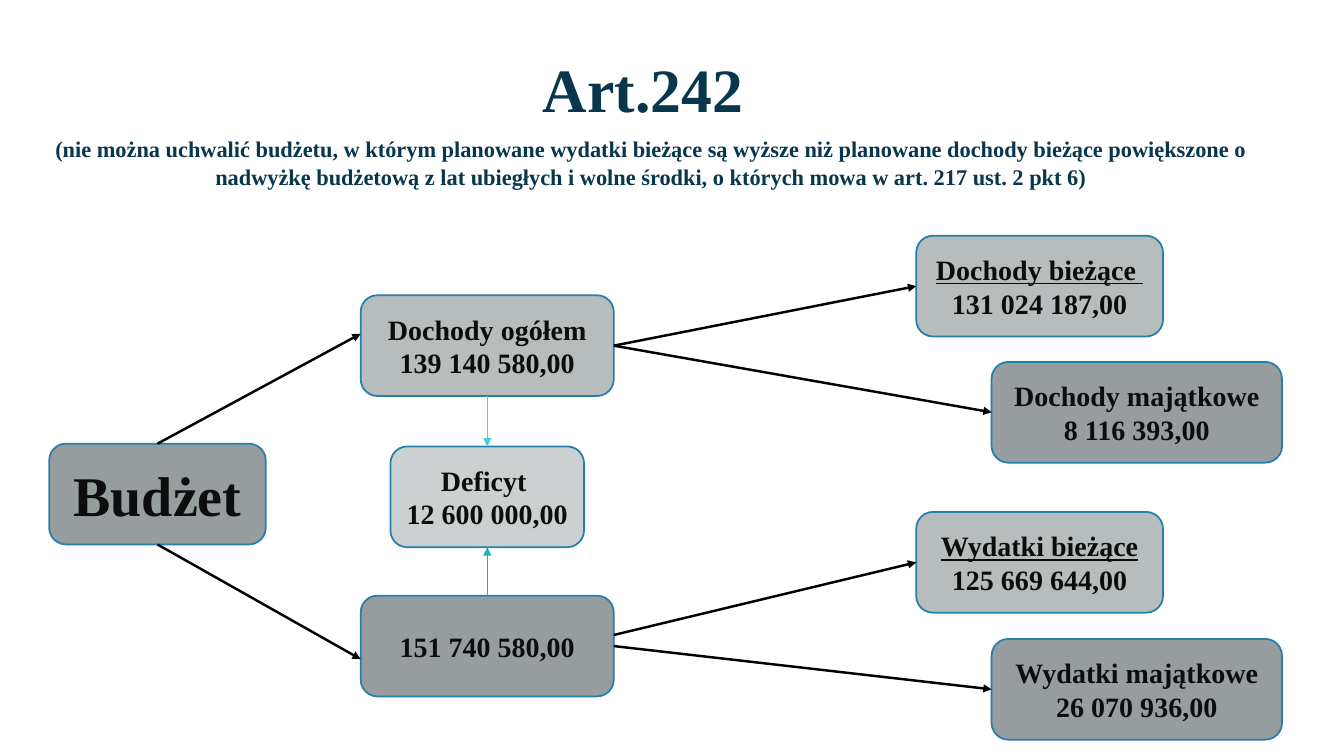
from pptx import Presentation
from pptx.dml.color import RGBColor
from pptx.enum.shapes import MSO_CONNECTOR as Link, MSO_SHAPE as Shape
from pptx.enum.text import MSO_ANCHOR as Anchor, PP_ALIGN as Align
from pptx.oxml.ns import qn
from pptx.util import Cm, Pt
from lxml.etree import SubElement

NAVY = RGBColor(0x07, 0x36, 0x4D)
INK = RGBColor(0x0D, 0x0D, 0x0D)
BLACK = RGBColor(0, 0, 0)
EDGE = RGBColor(0x24, 0x7F, 0xAF)
DARK = RGBColor(0x97, 0x9D, 0x9F)
MID = RGBColor(0xB7, 0xBC, 0xBD)
LIGHT = RGBColor(0xCD, 0xD0, 0xD1)
AQUA = RGBColor(0x4E, 0xCD, 0xDA)
TEAL = RGBColor(0x25, 0xAB, 0xB9)
TOP, LEFT, BASE, RIGHT = range(4)


class Deck:
    """Hold the slide and the style of its headings, cards and arrows."""

    font = "Times New Roman"
    high = 2.54

    def __init__(self):
        self.show = Presentation()
        self.show.slide_width, self.show.slide_height = Cm(33.87), Cm(19.05)
        self.slide = self.show.slides.add_slide(self.show.slide_layouts[0])

    def style(self, frame, size, color):
        for para in frame.paragraphs:
            para.alignment = Align.CENTER
            for run in para.runs:
                run.font.name, run.font.size = self.font, Pt(size)
                run.font.bold, run.font.color.rgb = True, color

    def head(self, index, text, top, high, size, anchor, pitch):
        box = self.slide.placeholders[index]
        box.left, box.top = Cm(1.12), Cm(top)
        box.width, box.height = Cm(30.56), Cm(high)
        frame = box.text_frame
        frame.text = text
        frame.vertical_anchor = anchor
        para = frame.paragraphs[0]
        para.space_before, para.line_spacing = Pt(0), pitch
        self.style(frame, size, NAVY)

    def card(self, text, left, top, wide, fill, size=20, under=False):
        box = self.slide.shapes.add_shape(
            Shape.ROUNDED_RECTANGLE, Cm(left), Cm(top), Cm(wide), Cm(self.high))
        box.shadow.inherit = False
        box.fill.solid()
        box.fill.fore_color.rgb = fill
        box.line.color.rgb, box.line.width = EDGE, Pt(1.25)
        frame = box.text_frame
        frame.text = text
        frame.vertical_anchor = Anchor.MIDDLE
        self.style(frame, size, INK)
        if under:
            frame.paragraphs[0].runs[0].font.underline = True
        return box

    def spot(self, box, side, shift):
        x = {LEFT: 0, RIGHT: box.width}.get(side, box.width // 2)
        y = {TOP: 0, BASE: box.height}.get(side, box.height // 2)
        return box.left + x, box.top + y + Cm(shift)

    def arrow(self, start, out, end, into, color=BLACK, wide=1.75, rise=0, drop=0):
        line = self.slide.shapes.add_connector(
            Link.STRAIGHT, *self.spot(start, out, rise), *self.spot(end, into, drop))
        if not rise:
            line.begin_connect(start, out)
        if not drop:
            line.end_connect(end, into)
        line.line.color.rgb, line.line.width = color, Pt(wide)
        SubElement(line.line._get_or_add_ln(), qn("a:tailEnd"), type="triangle")
        SubElement(line._element.spPr, qn("a:effectLst"))


def main():
    deck = Deck()
    deck.head(0, "Art.242 ", 1.07, 2.3, 44, Anchor.MIDDLE, 1.0)
    deck.head(1, "(nie można uchwalić budżetu, w którym planowane wydatki bieżące "
              "są wyższe niż planowane dochody bieżące powiększone o nadwyżkę "
              "budżetową z lat ubiegłych i wolne środki, o których mowa w "
              "art. 217 ust. 2 pkt 6)", 3.25, 1.7, 16, Anchor.TOP, 1.05)

    budget = deck.card("Budżet", 1.24, 11.18, 5.46, DARK, size=40)
    gap = deck.card("Deficyt \n12 600 000,00", 9.84, 11.25, 4.88, LIGHT)
    income = deck.card("Dochody ogółem\v139 140 580,00", 9.09, 7.44, 6.38, MID)
    spend = deck.card("151 740 580,00", 9.09, 15.01, 6.38, DARK)

    groups = [
        (income, 0, ("Dochody bieżące \n131 024 187,00", 5.94),
         ("Dochody majątkowe\n8 116 393,00", 9.12)),
        (spend, -0.28, ("Wydatki bieżące\n125 669 644,00", 12.9),
         ("Wydatki majątkowe\n26 070 936,00", 16.1)),
    ]
    for total, rise, (now, high), (asset, low) in groups:
        usual = deck.card(now, 23.09, high, 6.22, MID, under=True)
        fixed = deck.card(asset, 24.99, low, 7.32, DARK)
        deck.arrow(total, RIGHT, usual, LEFT, rise=rise)
        deck.arrow(total, RIGHT, fixed, LEFT)

    deck.arrow(budget, TOP, income, LEFT, drop=-0.3)
    deck.arrow(budget, BASE, spend, LEFT, drop=0.33)
    deck.arrow(income, BASE, gap, TOP, AQUA, 0.75)
    deck.arrow(spend, TOP, gap, BASE, TEAL, 0.75)
    deck.show.save("out.pptx")


if __name__ == "__main__":
    main()
